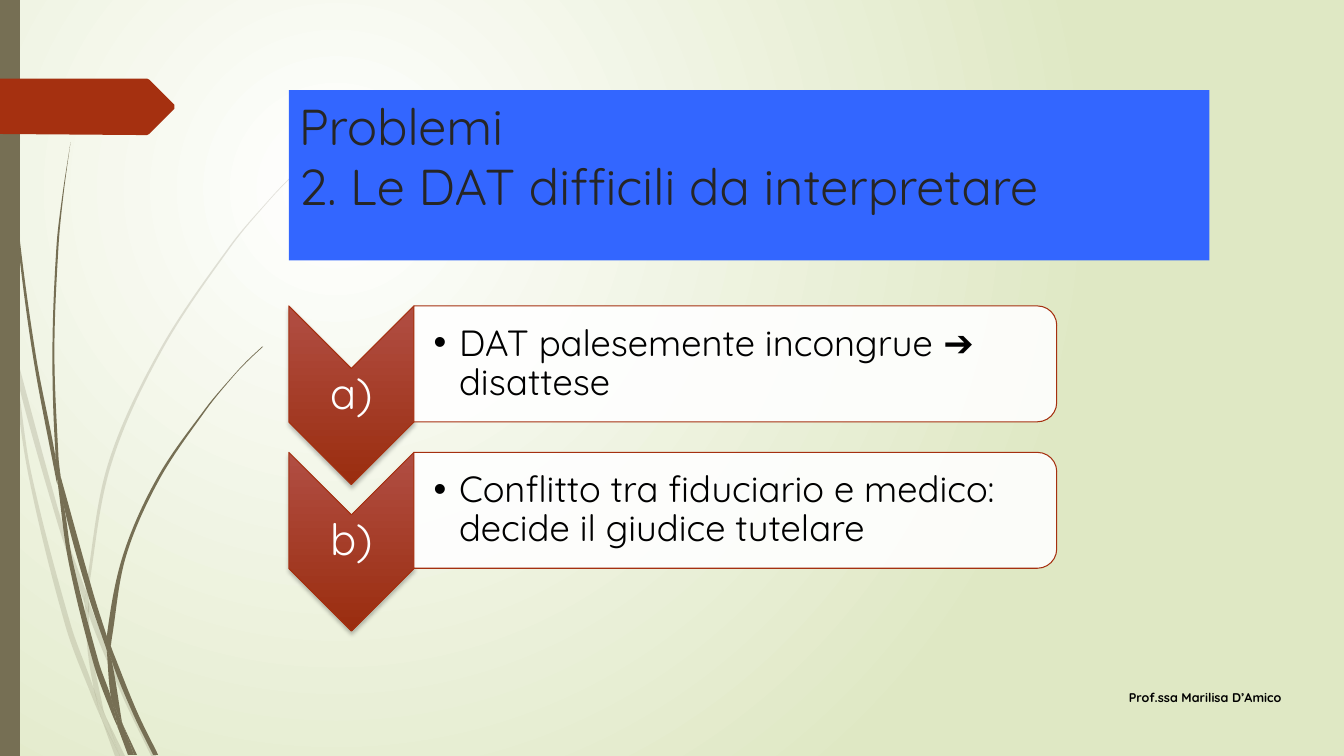
import math
import pptx
import pptx.util
import pptx.dml.color
import pptx.enum.shapes
import pptx.enum.text
import pptx.oxml
from pptx.oxml.ns import qn

Cm, Pt = pptx.util.Cm, pptx.util.Pt
RGB = pptx.dml.color.RGBColor
KIND = pptx.enum.shapes.MSO_SHAPE
ALIGN = pptx.enum.text.PP_ALIGN
ANCHOR = pptx.enum.text.MSO_ANCHOR

TITLE = "Problemi\v2. Le DAT difficili da interpretare"
ROWS = [
    ("a)", "DAT palesemente incongrue ➔ disattese"),
    ("b)", "Conflitto tra fiduciario e medico: decide il giudice tutelare"),
]
AUTHOR = "Prof.ssa Marilisa D’Amico"
FONT = "Quicksand"

WHITE, BLACK = RGB(0xFF, 0xFF, 0xFF), RGB(0, 0, 0)
INK, BLUE = RGB(0x26, 0x26, 0x26), RGB(0x33, 0x66, 0xFF)
GREEN, OLIVE = RGB(0xDF, 0xE8, 0xC4), RGB(0x76, 0x6F, 0x54)
RED = RGB(0xA5, 0x30, 0x10)
LIGHT, DEEP = RGB(0xB1, 0x4E, 0x43), RGB(0x9A, 0x2D, 0x0F)

# Pieces of grass, each as left edge and right edge, on a fine grid
UNIT = 0.0254  # cm per grid step
PALE = [
    ([(0, 299), (10, 344), (11, 350)], [(0, 282), (9, 322), (11, 350)]),
    ([(14, 345), (17, 376), (58, 522), (84, 599)],
     [(14, 345), (62, 520), (85, 586)]),
    ([(88, 596), (88, 610), (123, 694), (150, 750)],
     [(88, 596), (92, 607), (127, 692), (155, 750)]),
    ([(105, 711), (119, 750)], [(105, 711), (124, 750)]),
    ([(11, 350), (28, 470), (65, 621), (92, 693), (101, 714)],
     [(11, 350), (17, 376), (31, 469), (70, 619), (93, 683), (99, 707)]),
    ([(84, 599), (87, 646), (93, 683), (96, 692), (105, 711)],
     [(84, 599), (88, 608), (88, 610), (91, 646), (103, 706)]),
    ([(312, 153), (289, 175), (268, 197), (228, 244), (158, 348),
      (107, 461), (85, 584), (85, 586)],
     [(312, 154), (290, 175), (268, 198), (229, 245), (160, 349),
      (110, 462), (88, 584), (88, 596)]),
    ([(101, 714), (114, 750)], [(101, 714), (119, 750)]),
    ([(85, 586), (84, 599), (88, 608)], [(85, 586), (88, 596), (88, 610)]),
    ([(93, 683), (99, 707), (101, 714), (119, 750)],
     [(93, 683), (96, 692), (105, 711), (119, 750)]),
]
DARK = [
    ([(3, 0), (4, 48), (7, 110), (17, 233), (33, 355), (56, 477), (57, 481)],
     [(4, 0), (5, 48), (8, 109), (19, 232), (36, 355), (55, 453), (57, 481)]),
    ([(60, 472), (64, 505), (88, 592), (106, 645)],
     [(60, 472), (93, 590), (106, 631)]),
    ([(110, 641), (111, 656), (132, 708), (152, 749)],
     [(110, 641), (113, 649), (136, 706), (157, 749)]),
    ([(57, 477), (68, 557), (93, 659), (111, 708), (117, 722)],
     [(57, 477), (64, 505), (72, 556), (98, 657), (110, 691), (116, 717)]),
    ([(70, 141), (62, 193), (56, 245), (52, 349), (55, 449), (60, 472)],
     [(70, 141), (63, 193), (58, 245), (54, 349), (58, 453), (60, 472)]),
    ([(122, 719), (133, 749)], [(122, 719), (136, 749)]),
    ([(55, 449), (55, 453), (57, 477), (64, 505)],
     [(55, 449), (60, 472), (64, 505)]),
    ([(260, 344), (245, 358), (231, 373), (204, 405), (156, 474),
      (122, 551), (106, 631), (110, 641)],
     [(261, 344), (245, 359), (231, 374), (205, 406), (158, 476),
      (125, 552), (111, 633), (110, 641)]),
    ([(117, 722), (127, 749)], [(117, 722), (131, 749)]),
    ([(106, 645), (110, 691), (116, 706), (122, 719)],
     [(106, 645), (111, 656), (121, 716)]),
    ([(106, 631), (106, 645), (109, 651), (111, 656)],
     [(106, 631), (110, 641), (111, 656)]),
    ([(110, 691), (116, 717), (117, 722), (130, 749)],
     [(110, 691), (116, 706), (122, 719), (133, 749)]),
]
FLAG = [(0, 78), (136, 78), (146, 78), (148, 79), (173, 104), (173, 108),
        (148, 133), (146, 134), (136, 134), (0, 133)]

# Layout in cm
LEFT, TOP, PITCH = 7.28, 7.71, 3.69
TIP_W, TIP_H = 3.15, 4.5
BOX_W, BOX_H = 16.2, 2.92

NS = "http://schemas.openxmlformats.org/drawingml/2006/main"
SHADE = (f'<a:outerShdw xmlns:a="{NS}" blurRad="{Pt(3)}" dist="{Pt(2)}" '
         'dir="5400000" rotWithShape="0"><a:srgbClr val="000000">'
         '<a:alpha val="25000"/></a:srgbClr></a:outerShdw>')
GLOW = (f'<a:path xmlns:a="{NS}" path="circle"><a:fillToRect l="50000" '
        't="50000" r="100000" b="100000"/></a:path>')


def fade(shape, pct):
    """Set the opacity of a solid fill."""
    tone = shape.fill._xPr.find(qn("a:solidFill"))[0]
    tone.append(pptx.oxml.parse_xml(
        f'<a:alpha xmlns:a="{NS}" val="{pct * 1000}"/>'))


def blend(fill, first, last):
    """Make a two-stop gradient and return its XML element."""
    fill.gradient()
    for stop, tone, spot in zip(fill.gradient_stops, (first, last), (0, 1)):
        stop.color.rgb = tone
        stop.position = spot
    return fill._fill._gradFill


def bends(pts):
    """Bezier control points for each step of a smooth curve."""
    ends = [pts[0], *pts, pts[-1]]
    for a, b, c, d in zip(ends, ends[1:], ends[2:], ends[3:]):
        gap = math.dist(b, c)
        out = gap / (math.dist(a, b) + gap) / 3
        back = gap / (math.dist(c, d) + gap) / 3
        yield (tuple(q + (r - p) * out for p, q, r in zip(a, b, c)),
               tuple(q - (r - p) * back for p, q, r in zip(b, c, d)), c)


def outline(pts, tone):
    spots = [(Cm(x * UNIT), Cm(y * UNIT)) for x, y in pts]
    pen = slide.shapes.build_freeform(*spots[0])
    pen.add_line_segments(spots[1:], close=True)
    return paint(pen.convert_to_shape(), tone)


def blade(left, right):
    """Draw one piece of grass, with both edges curved."""
    right = right[::-1]
    shape = outline(left + right, OLIVE)
    steps = [*bends(left), None, *bends(right)]
    lines = list(shape._element.iter(qn("a:lnTo")))
    for line, step in zip(lines, steps):
        if step:
            dots = "".join(
                f'<a:pt x="{Cm(x * UNIT) - shape.left}" '
                f'y="{Cm(y * UNIT) - shape.top}"/>' for x, y in step)
            line.getparent().replace(line, pptx.oxml.parse_xml(
                f'<a:cubicBezTo xmlns:a="{NS}">{dots}</a:cubicBezTo>'))
    return shape


def paint(shape, fill=None, line=None):
    shape.shadow.inherit = False
    if fill is not None:
        shape.fill.solid()
        shape.fill.fore_color.rgb = fill
    if line is None:
        shape.line.fill.background()
    else:
        shape.line.color.rgb = line
        shape.line.width = Pt(0.75)
    return shape


def place(kind, x, y, w, h):
    return slide.shapes.add_shape(kind, Cm(x), Cm(y), Cm(w), Cm(h))


def turn(kind, x, y, w, h):
    """Add a shape turned by 90 degrees that covers the given frame."""
    shape = place(kind, x + (w - h) / 2, y + (h - w) / 2, h, w)
    shape.rotation = 90
    return shape


def write(text, x, y, w, h, size, tone, pad=None, anchor=ANCHOR.MIDDLE):
    box = slide.shapes.add_textbox(Cm(x), Cm(y), Cm(w), Cm(h))
    frame = box.text_frame
    frame.word_wrap = True
    frame.vertical_anchor = anchor
    if pad is not None:
        frame.margin_left = Cm(pad)
        frame.margin_top = frame.margin_right = frame.margin_bottom = Cm(0.05)
    par = frame.paragraphs[0]
    par.text = text
    for run in par.runs:
        run.font.name, run.font.size = FONT, Pt(size)
        run.font.color.rgb = tone
    return box, par


deck = pptx.Presentation()
deck.slide_width, deck.slide_height = Cm(33.87), Cm(19.05)
slide = deck.slides.add_slide(deck.slide_layouts[6])
grad = blend(slide.background.fill, WHITE, GREEN)
grad.replace(grad.find(qn("a:lin")), pptx.oxml.parse_xml(GLOW))

for edges in PALE:
    fade(blade(*edges), 20)
for edges in DARK:
    blade(*edges)
paint(place(KIND.RECTANGLE, 0, 0, 0.5, 19.05), OLIVE)
outline(FLAG, RED)

head, _ = write(TITLE, LEFT, 2.27, 23.2, 4.29, 36, INK, anchor=ANCHOR.TOP)
head.fill.solid()
head.fill.fore_color.rgb = BLUE

for i, (mark, text) in enumerate(ROWS):
    y = TOP + i * PITCH
    tip = paint(turn(KIND.CHEVRON, LEFT, y, TIP_W, TIP_H), line=RED)
    blend(tip.fill, LIGHT, DEEP)
    tip.fill.gradient_angle = 0
    tip._element.spPr.find(qn("a:effectLst")).append(
        pptx.oxml.parse_xml(SHADE))
    _, par = write(mark, LEFT, y + 1.58, TIP_W, 1.35, 31, WHITE, 0.05)
    par.alignment = ALIGN.CENTER
    par.line_spacing = 0.9

    x = LEFT + TIP_W
    box = turn(KIND.ROUND_2_SAME_RECTANGLE, x, y, BOX_W, BOX_H)
    fade(paint(box, WHITE, RED), 90)
    _, par = write(text, x, y + 0.14, 16.05, 2.64, 26, BLACK, 0.5)
    par.line_spacing = 0.9
    props = par._p.get_or_add_pPr()
    props.set("marL", str(Cm(0.64)))
    props.set("indent", str(-Cm(0.64)))
    for tag in ('buFont xmlns:a="%s" typeface="Arial"',
                'buChar xmlns:a="%s" char="•"'):
        props.append(pptx.oxml.parse_xml(f"<a:{tag % NS}/>"))

_, par = write(AUTHOR, 11.38, 17.07, 21.16, 1.02, 9, BLACK)
par.alignment = ALIGN.RIGHT
par.runs[0].font.bold = True

deck.save("out.pptx")
